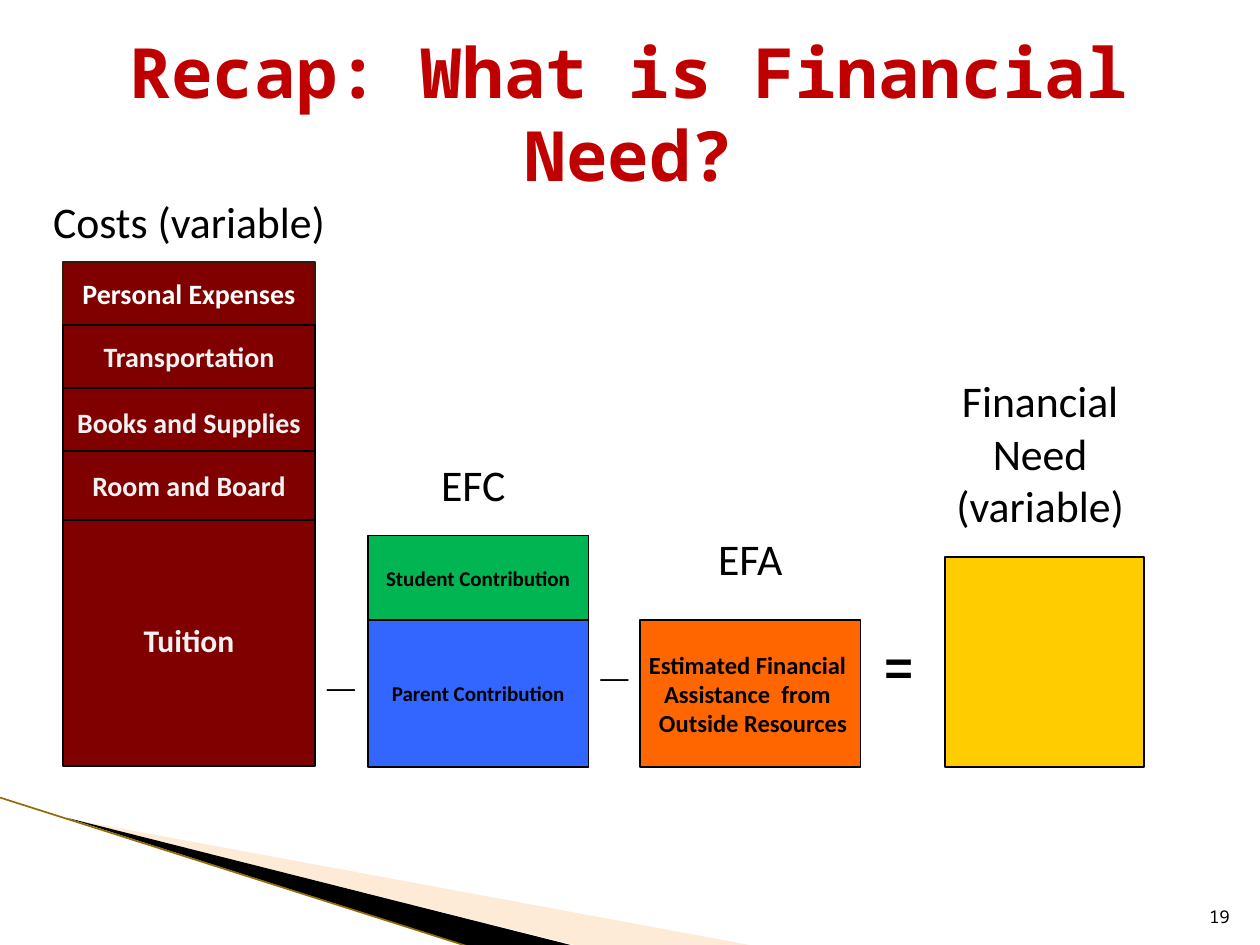
from lxml.etree import SubElement
from pptx import Presentation
from pptx.dml.color import RGBColor
from pptx.enum.shapes import MSO_CONNECTOR, MSO_SHAPE
from pptx.enum.text import MSO_ANCHOR, PP_ALIGN
from pptx.oxml.ns import qn
from pptx.util import Inches, Pt

COLORS = {
    "title": "C00000", "black": "000000", "white": "FFFFFF", "pale": "F2F2F2",
    "cost": "800000", "cost edge": "331B07", "parent": "3366FF",
    "student": "00B552", "assistance": "FF6600", "need": "FFCC00",
    "peach": "FCCF9B", "gold": "94690A",
}
TITLE = {"name": "Noto Sans Mono", "size": Pt(39.6), "bold": True}
LABEL = {"name": "Calibri", "size": Pt(25), "bold": False}
OPERATOR = {"name": "Arial", "size": Pt(28), "bold": True}
NUMBER = {"name": "Noto Sans Mono", "size": Pt(10), "bold": False}

COST_LEFT, COST_WIDTH = 0.5, 2
STACK_WIDTH = 1.75
EFC_LEFT, EFA_LEFT = 2.92, 5.08


def color(name):
    return RGBColor.from_string(COLORS[name])


def write(shape, text, font, ink="black", align=PP_ALIGN.CENTER,
          anchor=MSO_ANCHOR.TOP, wrap=True):
    frame = shape.text_frame
    frame.text = text
    frame.word_wrap = wrap
    frame.vertical_anchor = anchor
    for paragraph in frame.paragraphs:
        paragraph.alignment = align
        paragraph.font.color.rgb = color(ink)
        for attribute, value in font.items():
            setattr(paragraph.font, attribute, value)


def add_title(slide, text):
    title = slide.shapes.title
    box = {"left": 0.62, "top": 0.3, "width": 8.74, "height": 1.18}
    for attribute, value in box.items():
        setattr(title, attribute, Inches(value))
    write(title, text, TITLE, "title", anchor=MSO_ANCHOR.MIDDLE)


def add_text(slide, box, text, font, **layout):
    write(slide.shapes.add_textbox(*map(Inches, box)), text, font, **layout)


def add_block(slide, box, fill, text="", size=16, ink="black", edge="black"):
    block = slide.shapes.add_shape(MSO_SHAPE.RECTANGLE, *map(Inches, box))
    block.shadow.inherit = False
    block.fill.solid()
    block.fill.fore_color.rgb = color(fill)
    block.line.color.rgb = color(edge)
    block.line.width = Pt(1)
    if text:
        font = {"name": "Calibri", "size": Pt(size), "bold": True}
        write(block, text, font, ink, anchor=MSO_ANCHOR.MIDDLE, wrap=False)


def add_wedge(slide, points, fill, opacity=100):
    corners = [(Inches(x), Inches(y)) for x, y in points]
    builder = slide.shapes.build_freeform(*corners[0])
    builder.add_line_segments(corners[1:])
    wedge = builder.convert_to_shape()
    wedge.shadow.inherit = False
    wedge.line.fill.background()
    wedge.fill.solid()
    wedge.fill.fore_color.rgb = color(fill)
    if opacity < 100:
        fill_color = wedge.fill._xPr.find(".//" + qn("a:srgbClr"))
        SubElement(fill_color, qn("a:alpha"), val=str(opacity * 1000))


def add_line(slide, start, end, ink, width):
    line = slide.shapes.add_connector(
        MSO_CONNECTOR.STRAIGHT, *map(Inches, start + end))
    line.line.color.rgb = color(ink)
    line.line.width = Pt(width)
    SubElement(line._element.spPr, qn("a:effectLst"))


def add_corner_decoration(slide):
    add_wedge(slide, [(0.55, 6.5), (5.95, 7.5), (4.56, 7.5)], "peach", 40)
    add_wedge(slide, [(0.53, 6.49), (4.57, 7.51), (3.72, 7.51)], "black")
    add_line(slide, (0, 6.33), (3.71, 7.51), "gold", 0.95)


def add_cost_stack(slide):
    costs = [
        ("Tuition", 4.08, 2, 18, "pale", "black"),
        ("Personal Expenses", 2.08, 0.5, 16, "white", "cost edge"),
        ("Books and Supplies", 3.08, 0.55, 16, "pale", "black"),
        ("Transportation", 2.58, 0.5, 16, "pale", "black"),
        ("Room and Board", 3.58, 0.55, 16, "pale", "black"),
    ]
    for text, top, height, size, ink, edge in costs:
        add_block(slide, (COST_LEFT, top, COST_WIDTH, height), "cost",
                  text, size, ink, edge)


def add_resource_blocks(slide):
    add_block(slide, (EFC_LEFT, 4.92, STACK_WIDTH, 1.17), "parent",
              "Parent Contribution", 12)
    add_block(slide, (EFC_LEFT, 4.25, STACK_WIDTH, 0.67), "student",
              "Student Contribution", 12)
    add_block(slide, (EFA_LEFT, 4.92, STACK_WIDTH, 1.17), "assistance",
              "Estimated Financial \nAssistance  from \n Outside Resources", 14)
    add_block(slide, (7.5, 4.42, 1.58, 1.67), "need")


def main():
    presentation = Presentation()
    presentation.slide_width = Inches(10)
    presentation.slide_height = Inches(7.5)
    slide = presentation.slides.add_slide(presentation.slide_layouts[5])

    add_corner_decoration(slide)
    add_title(slide, "Recap: What is Financial Need?")
    add_cost_stack(slide)
    add_resource_blocks(slide)

    labels = [
        ("Costs (variable)", (0.25, 1.5, 2.5, 0.52)),
        ("EFC ", (2.67, 3.58, 2.25, 0.52)),
        ("EFA", (EFA_LEFT, 4.17, STACK_WIDTH, 0.52)),
        ("Financial Need (variable)", (7.42, 2.92, 1.67, 1.36)),
    ]
    for text, box in labels:
        add_text(slide, box, text, LABEL)

    for text, left, top in [("_", 2.5, 5), ("_", 4.67, 4.92), ("=", 6.92, 5)]:
        add_text(slide, (left, top, 0.5, 0.98), text, OPERATOR,
                 align=PP_ALIGN.LEFT)

    add_text(slide, (9.46, 7.01, 0.4, 0.4), "19", NUMBER,
             align=PP_ALIGN.RIGHT, anchor=MSO_ANCHOR.BOTTOM)
    presentation.save("out.pptx")


if __name__ == "__main__":
    main()
